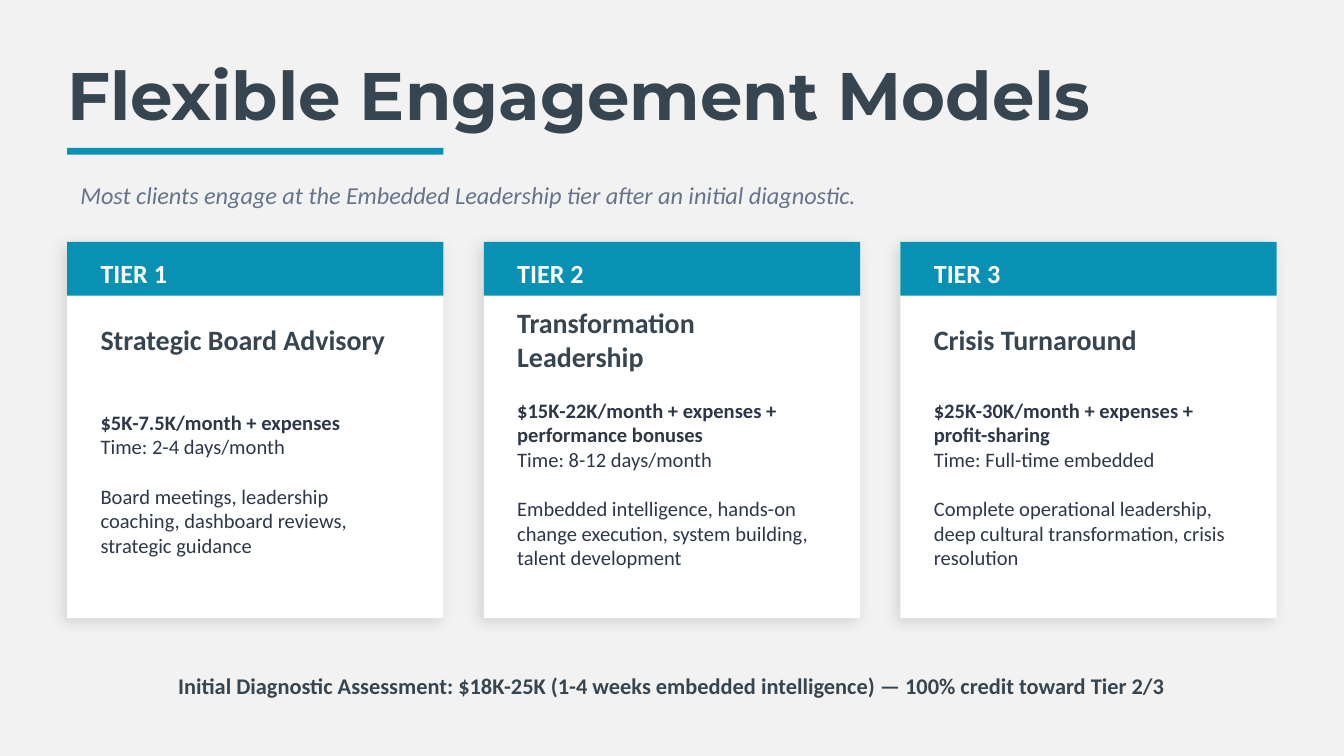
from lxml import etree
from pptx import Presentation
from pptx.dml.color import RGBColor
from pptx.enum.shapes import MSO_SHAPE
from pptx.enum.text import MSO_ANCHOR, PP_ALIGN
from pptx.oxml.ns import qn
from pptx.util import Inches, Pt

RECT = MSO_SHAPE.RECTANGLE
MIDDLE = MSO_ANCHOR.MIDDLE
LEFT, CENTER = PP_ALIGN.LEFT, PP_ALIGN.CENTER

# Content
TITLE = "Flexible Engagement Models"
SUBTITLE = "Most clients engage at the Embedded Leadership tier after an initial diagnostic."
TIERS = [
    ("TIER 1", "Strategic Board Advisory", "$5K-7.5K/month + expenses",
     "Time: 2-4 days/month",
     "Board meetings, leadership coaching, dashboard reviews, strategic guidance"),
    ("TIER 2", "Transformation Leadership",
     "$15K-22K/month + expenses + performance bonuses",
     "Time: 8-12 days/month",
     "Embedded intelligence, hands-on change execution, system building, talent development"),
    ("TIER 3", "Crisis Turnaround", "$25K-30K/month + expenses + profit-sharing",
     "Time: Full-time embedded",
     "Complete operational leadership, deep cultural transformation, crisis resolution"),
]
FOOTER = ("Initial Diagnostic Assessment: $18K-25K (1-4 weeks embedded intelligence)"
          " — 100% credit toward Tier 2/3")

# Look
COLORS = {"bg": "F2F2F2", "accent": "0891B2", "card": "FFFFFF", "dark": "36454F",
          "muted": "64748B", "body": "2D3748", "shadow": "000000"}
FORMATS = {
    "title": {"name": "Montserrat", "size": Pt(36), "bold": True, "color": "dark"},
    "subtitle": {"name": "Calibri", "size": Pt(13), "italic": True, "color": "muted"},
    "tier": {"name": "Calibri", "size": Pt(14), "bold": True, "color": "card"},
    "name": {"name": "Calibri", "size": Pt(15), "bold": True, "color": "dark"},
    "price": {"name": "Calibri", "size": Pt(11), "bold": True, "color": "body"},
    "body": {"name": "Calibri", "size": Pt(11), "bold": False, "color": "body"},
    "footer": {"name": "Calibri", "size": Pt(12), "bold": True, "color": "dark"},
}

# Layout, in inches
MARGIN, WIDTH = 0.5, 9
CARD_TOP, CARD_SIZE, CARD_GAP = 1.8, 2.8, 0.3
HEADER_H, PAD = 0.4, 0.15
LINE_GAP = Pt(13.2)


def rgb(key):
    return RGBColor.from_string(COLORS[key])


def add_rect(s, x, y, w, h, color):
    sp = s.shapes.add_shape(RECT, Inches(x), Inches(y), Inches(w), Inches(h))
    sp.shadow.inherit = False
    sp.fill.solid()
    sp.fill.fore_color.rgb = rgb(color)
    sp.line.fill.background()
    return sp


def add_shadow(sp):
    effects = sp._element.spPr.find(qn("a:effectLst"))
    shadow = etree.SubElement(effects, qn("a:outerShdw"), blurRad=str(Pt(8)),
                              dist=str(Pt(3)), dir=str(135 * 60000),
                              algn="bl", rotWithShape="0")
    color = etree.SubElement(shadow, qn("a:srgbClr"), val=COLORS["shadow"])
    etree.SubElement(color, qn("a:alpha"), val="12000")


def add_text(s, x, y, w, h, lines, align=LEFT):
    """Each line is (text, format key, space before)."""
    tf = s.shapes.add_textbox(Inches(x), Inches(y), Inches(w), Inches(h)).text_frame
    tf.word_wrap = True
    tf.vertical_anchor = MIDDLE
    for i, (text, key, gap) in enumerate(lines):
        p = tf.paragraphs[0] if i == 0 else tf.add_paragraph()
        p.alignment = align
        if gap:
            p.space_before = gap
        r = p.add_run()
        r.text = text
        for attr, value in FORMATS[key].items():
            if attr == "color":
                r.font.color.rgb = rgb(value)
            else:
                setattr(r.font, attr, value)
    return tf


def add_card(s, x, tier, name, price, time, scope):
    add_shadow(add_rect(s, x, CARD_TOP, CARD_SIZE, CARD_SIZE, "card"))
    add_rect(s, x, CARD_TOP, CARD_SIZE, HEADER_H, "accent")
    details = [(price, "price", 0), (time, "body", 0), (scope, "body", LINE_GAP)]
    for y, h, lines in [(1.93, 0.2, [(tier, "tier", 0)]),
                        (2.35, 0.35, [(name, "name", 0)]),
                        (2.8, 1.6, details)]:
        add_text(s, x + PAD, y, CARD_SIZE - 2 * PAD, h, lines)


def main():
    prs = Presentation()
    prs.slide_width = Inches(10)
    prs.slide_height = prs.slide_width * 9 // 16
    s = prs.slides.add_slide(prs.slide_layouts[6])
    s.background.fill.solid()
    s.background.fill.fore_color.rgb = rgb("bg")

    # Heading
    tf = add_text(s, MARGIN, 0.4, WIDTH, 0.6, [(TITLE, "title", 0)])
    for side in ("left", "top", "right", "bottom"):
        setattr(tf, f"margin_{side}", 0)
    add_rect(s, MARGIN, 1.1, CARD_SIZE, 0.05, "accent")
    add_text(s, MARGIN, 1.3, WIDTH, 0.3, [(SUBTITLE, "subtitle", 0)])

    # Tier cards
    for i, tier in enumerate(TIERS):
        add_card(s, MARGIN + i * (CARD_SIZE + CARD_GAP), *tier)

    # Footer
    add_text(s, MARGIN, 4.9, WIDTH, 0.4, [(FOOTER, "footer", 0)], CENTER)
    prs.save("out.pptx")


if __name__ == "__main__":
    main()
